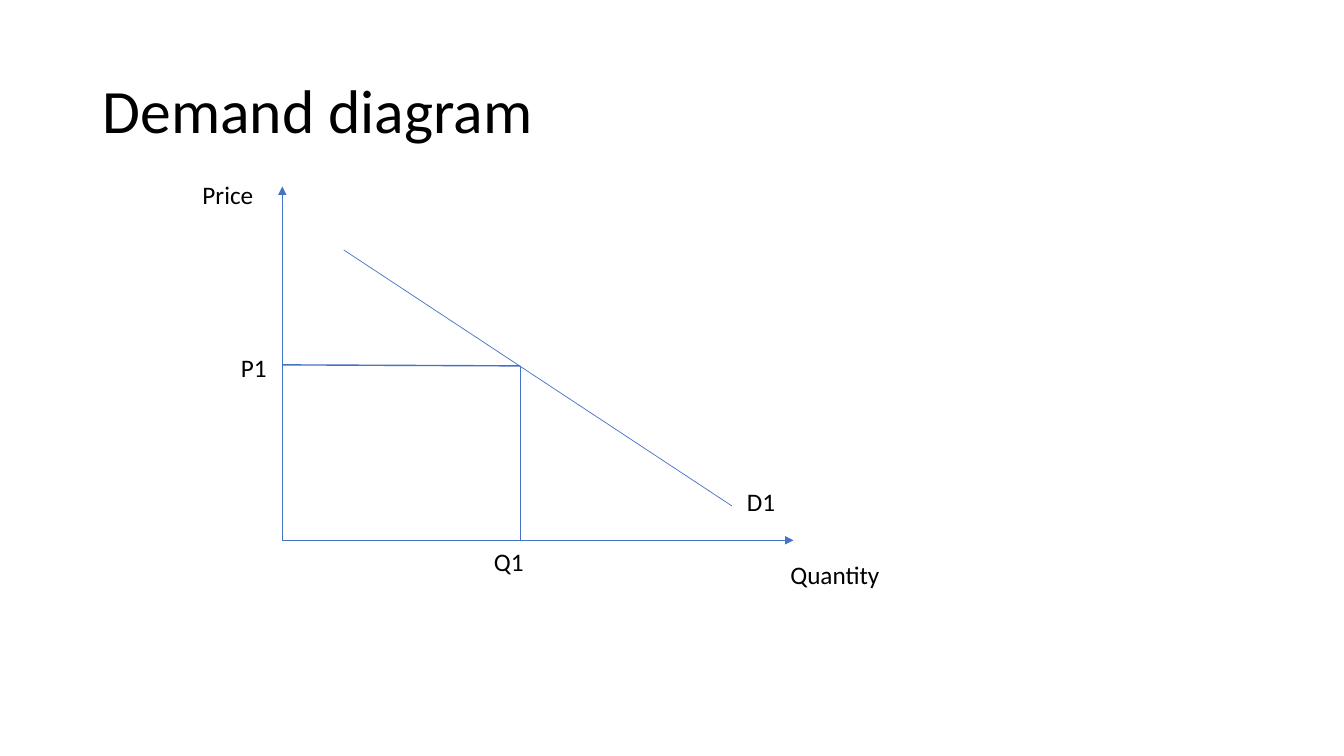
"""Build a slide with a demand diagram: axes, demand curve and price-quantity guides."""
from lxml import etree
from pptx import Presentation
from pptx.dml.color import RGBColor
from pptx.enum import shapes, text
from pptx.oxml import ns
from pptx.util import Inches, Pt

BLUE = RGBColor(0x44, 0x72, 0xC4)
BLACK = RGBColor(0, 0, 0)
FONT = "Calibri"

deck = Presentation()
deck.slide_width = Inches(13.33)
deck.slide_height = Inches(7.5)
page = deck.slides.add_slide(deck.slide_layouts[6])


def add_text(words, left, top, width, height, size=18):
    box = page.shapes.add_textbox(Inches(left), Inches(top), Inches(width), Inches(height))
    box.text_frame.word_wrap = True
    para = box.text_frame.paragraphs[0]
    span = para.add_run()
    span.text = words
    span.font.name = FONT
    span.font.size = Pt(size)
    span.font.color.rgb = BLACK
    return box


title = add_text("Demand diagram", 0.92, 0.4, 11.5, 1.45, 44)
title.text_frame.vertical_anchor = text.MSO_ANCHOR.MIDDLE
title.text_frame.paragraphs[0].line_spacing = 0.9

origin = (2.8, 5.36)
equilibrium = (5.16, 3.63)
lines = [
    (origin, (2.8, 1.85), 0.5, True),
    (origin, (7.87, 5.36), 0.5, True),
    ((3.41, 2.48), (7.26, 5.02), 0.5, False),
    (equilibrium, (5.16, 5.37), 1, False),
    (equilibrium, (2.8, 3.62), 1, False),
]
for start, end, weight, has_arrow in lines:
    line = page.shapes.add_connector(
        shapes.MSO_CONNECTOR.STRAIGHT, *[Inches(value) for value in start + end]
    )
    line.line.color.rgb = BLUE
    line.line.width = Pt(weight)
    if has_arrow:
        outline = line.line._get_or_add_ln()
        etree.SubElement(outline, ns.qn("a:tailEnd"), type="triangle")
    etree.SubElement(line._element.spPr, ns.qn("a:effectLst"))

labels = [
    ("Quantity", 7.74, 5.5, 1.38),
    ("Price", 1.91, 1.73, 1.62),
    ("Q1", 4.8, 5.37, 1.06),
    ("P1", 2.29, 3.45, 0.54),
    ("D1", 7.31, 4.78, 0.62),
]
for words, left, top, width in labels:
    label = add_text(words, left, top, width, 0.4)
    label.text_frame.auto_size = text.MSO_AUTO_SIZE.SHAPE_TO_FIT_TEXT

deck.save("out.pptx")
